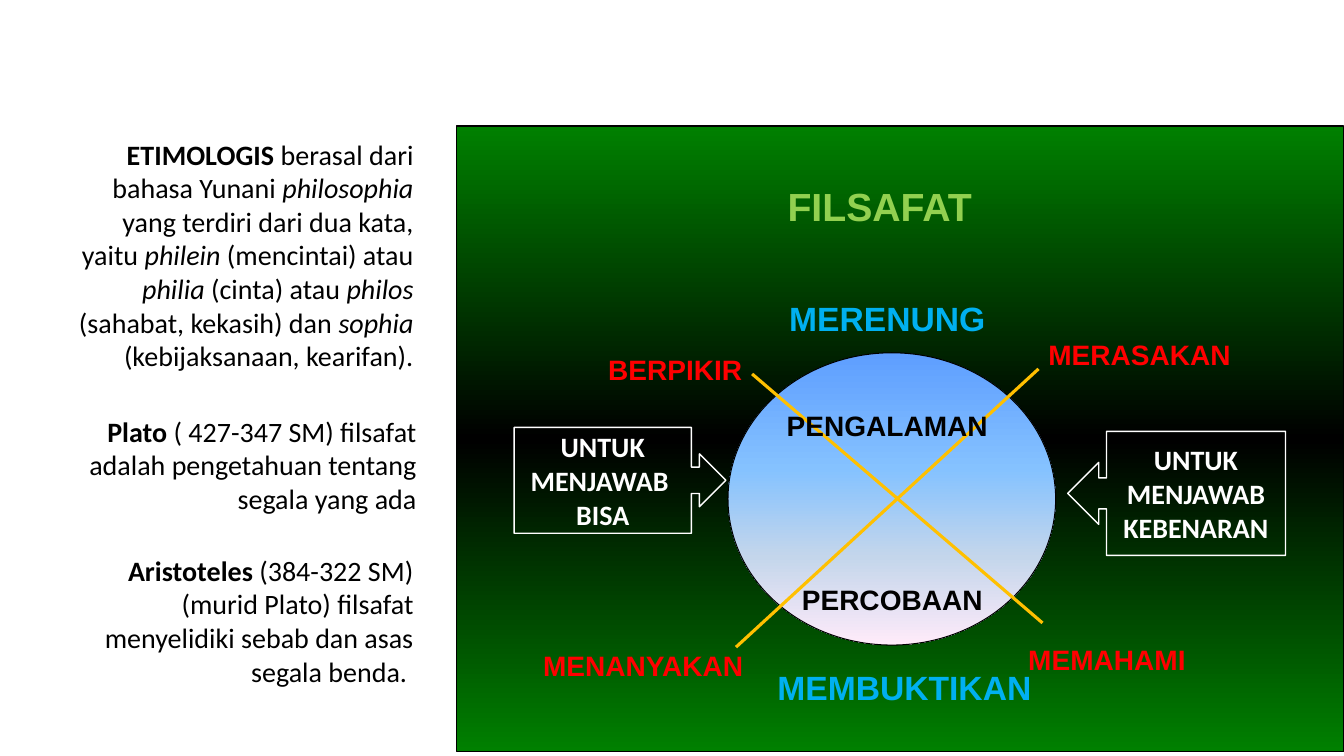
from lxml import etree
from pptx import Presentation
from pptx.dml.color import RGBColor
from pptx.enum.shapes import MSO_CONNECTOR, MSO_SHAPE
from pptx.enum.text import MSO_ANCHOR, MSO_AUTO_SIZE, PP_ALIGN
from pptx.oxml.ns import qn
from pptx.util import Inches, Pt

LEFT, CENTER, RIGHT = PP_ALIGN.LEFT, PP_ALIGN.CENTER, PP_ALIGN.RIGHT
MIDDLE = MSO_ANCHOR.MIDDLE
FIT_SHAPE = MSO_AUTO_SIZE.SHAPE_TO_FIT_TEXT
STRAIGHT = MSO_CONNECTOR.STRAIGHT
RECTANGLE, OVAL = MSO_SHAPE.RECTANGLE, MSO_SHAPE.OVAL
RIGHT_CALLOUT = MSO_SHAPE.RIGHT_ARROW_CALLOUT
LEFT_CALLOUT = MSO_SHAPE.LEFT_ARROW_CALLOUT

BLACK = RGBColor(0x00, 0x00, 0x00)
WHITE = RGBColor(0xFF, 0xFF, 0xFF)
GREEN = RGBColor(0x00, 0x80, 0x00)
LIME = RGBColor(0x92, 0xD0, 0x50)
CYAN = RGBColor(0x00, 0xB0, 0xF0)
RED = RGBColor(0xFF, 0x00, 0x00)
GOLD = RGBColor(0xFF, 0xC0, 0x00)
BLUE = RGBColor(0x5E, 0x9E, 0xFF)
SKY = RGBColor(0x85, 0xC2, 0xFF)
MIST = RGBColor(0xC4, 0xD6, 0xEB)
PINK = RGBColor(0xFF, 0xEB, 0xFA)

PANEL_STOPS = [(0, GREEN), (50, BLACK), (100, GREEN)]
CIRCLE_STOPS = [(0, BLUE), (40, SKY), (70, MIST), (100, PINK)]

HEADING = {"name": "Arial", "size": Pt(28), "bold": True}
ACTION = {"name": "Arial", "size": Pt(24), "bold": True}
TERM = {"name": "Arial", "size": Pt(20), "bold": True}
BODY = {"name": "Calibri", "size": Pt(20)}
BOLD = {"bold": True}
ITALIC = {"italic": True}

LABELS = [
    ("FILSAFAT", 1.53, 0.51, 5.33, 0.57, HEADING, LIME, CENTER),
    ("MEMBUKTIKAN", 2.94, 5.32, 3, 0.51, ACTION, CYAN, CENTER),
    ("MERENUNG", 2.77, 1.66, 3, 0.51, ACTION, CYAN, CENTER),
    ("MERASAKAN", 5.77, 2.05, 2.5, 0.44, TERM, RED, LEFT),
    ("BERPIKIR", 0.43, 2.2, 2.5, 0.44, TERM, RED, RIGHT),
    ("PENGALAMAN", 3.02, 2.75, 2.5, 0.44, TERM, BLACK, CENTER),
    ("PERCOBAAN", 3.07, 4.48, 2.5, 0.44, TERM, BLACK, CENTER),
    ("MEMAHAMI", 5.57, 5.08, 2.5, 0.44, TERM, RED, LEFT),
    ("MENANYAKAN", 0.44, 5.13, 2.5, 0.44, TERM, RED, RIGHT),
]
CROSSING_LINES = [(2.93, 2.46, 5.81, 4.93), (5.77, 2.41, 2.77, 5.17)]
CALLOUTS = [
    (RIGHT_CALLOUT, 0.57, 2.99, 2.1, 1.05, 0.837, ["UNTUK MENJAWAB ", "BISA"]),
    (LEFT_CALLOUT, 6.06, 3.03, 2.16, 1.23, 0.822, ["UNTUK MENJAWAB KEBENARAN"]),
]
DEFINITIONS = [
    (0.19, 0, 3.62, 2.79, 12, [
        ("ETIMOLOGIS ", BOLD), ("berasal dari bahasa Yunani ", {}),
        ("philosophia", ITALIC), (" yang terdiri dari dua kata, yaitu ", {}),
        ("philein", ITALIC), (" (mencintai) atau ", {}),
        ("philia", ITALIC), (" (cinta) atau ", {}),
        ("philos", ITALIC), (" (sahabat, kekasih) dan ", {}),
        ("sophia", ITALIC), (" (kebijaksanaan, kearifan).", {}),
    ]),
    (0.22, 2.75, 3.62, 1.12, 0, [
        ("Plato ", BOLD),
        ("( 427-347 SM) filsafat adalah pengetahuan tentang segala yang ada", {}),
    ]),
    (0, 4.13, 3.81, 1.45, 0, [
        ("Aristoteles", BOLD),
        (" (384-322 SM) (murid Plato) filsafat menyelidiki sebab dan asas segala benda. ", {}),
    ]),
]


def add_run(paragraph, text, color, style):
    """Append a run whose font takes the values of the style."""
    run = paragraph.add_run()
    run.text = text
    run.font.color.rgb = color
    for name, value in style.items():
        setattr(run.font, name, value)


def add_text(slide, left, top, width, height, alignment):
    """Add a wrapping text box and return its first paragraph."""
    box = slide.shapes.add_textbox(Inches(left), Inches(top), Inches(width), Inches(height))
    box.text_frame.word_wrap = True
    box.text_frame.auto_size = FIT_SHAPE
    paragraph = box.text_frame.paragraphs[0]
    paragraph.alignment = alignment
    return paragraph


def add_outlined_shape(slide, kind, left, top, width, height, color, weight):
    """Add a shape with an outline and no shadow."""
    shape = slide.shapes.add_shape(kind, Inches(left), Inches(top), Inches(width), Inches(height))
    shape.shadow.inherit = False
    shape.line.color.rgb = color
    shape.line.width = Pt(weight)
    return shape


def fill_gradient(shape, stops):
    """Fill a shape from top to bottom with the colour stops."""
    shape.fill.gradient()
    shape.fill.gradient_angle = 270
    stop_list = shape.element.spPr.find(qn("a:gradFill")).find(qn("a:gsLst"))
    for stop in list(stop_list):
        stop_list.remove(stop)
    for position, color in stops:
        stop = etree.SubElement(stop_list, qn("a:gs"), pos=str(position * 1000))
        etree.SubElement(stop, qn("a:srgbClr"), val=str(color))


def add_callout(slide, kind, left, top, width, height, body_share, lines):
    """Add an unfilled arrow callout with centred text."""
    callout = add_outlined_shape(slide, kind, left, top, width, height, WHITE, 1)
    callout.fill.background()
    callout.adjustments[3] = body_share
    for index in range(3):
        callout.adjustments[index] = 0.25
    frame = callout.text_frame
    frame.word_wrap = True
    frame.vertical_anchor = MIDDLE
    for index, line in enumerate(lines):
        paragraph = frame.add_paragraph() if index else frame.paragraphs[0]
        paragraph.alignment = CENTER
        add_run(paragraph, line, WHITE, BODY | BOLD)


def add_crossing_line(slide, start_x, start_y, end_x, end_y):
    """Add one gold line across the circle."""
    line = slide.shapes.add_connector(
        STRAIGHT, Inches(start_x), Inches(start_y), Inches(end_x), Inches(end_y))
    line.line.color.rgb = GOLD
    line.line.width = Pt(2.25)
    etree.SubElement(line.element.spPr, qn("a:effectLst"))


def add_diagram(slide, left, top, width, height):
    """Place the philosophy diagram in its green panel."""
    panel = add_outlined_shape(slide, RECTANGLE, left, top, width, height, BLACK, 0.75)
    fill_gradient(panel, PANEL_STOPS)
    circle = add_outlined_shape(slide, OVAL, left + 2.69, top + 2.25, 3.25, 2.9, BLACK, 0.75)
    fill_gradient(circle, CIRCLE_STOPS)
    for start_x, start_y, end_x, end_y in CROSSING_LINES:
        add_crossing_line(slide, left + start_x, top + start_y, left + end_x, top + end_y)
    for kind, x, y, *details in CALLOUTS:
        add_callout(slide, kind, left + x, top + y, *details)
    for text, x, y, label_width, label_height, style, color, alignment in LABELS:
        paragraph = add_text(slide, left + x, top + y, label_width, label_height, alignment)
        add_run(paragraph, text, color, style)


def add_definitions(slide, left, top):
    """Place the right-aligned definitions in a column."""
    for x, y, width, height, space_before, runs in DEFINITIONS:
        paragraph = add_text(slide, left + x, top + y, width, height, RIGHT)
        paragraph.space_before = Pt(space_before)
        for text, emphasis in runs:
            add_run(paragraph, text, BLACK, BODY | emphasis)


def main():
    """Build and save the slide."""
    presentation = Presentation()
    presentation.slide_width = Inches(13.33)
    presentation.slide_height = Inches(7.5)
    slide = presentation.slides.add_slide(presentation.slide_layouts[6])
    add_diagram(slide, 4.53, 1.25, 8.8, 6.21)
    add_definitions(slide, 0.39, 1.31)
    presentation.save("out.pptx")


if __name__ == "__main__":
    main()
